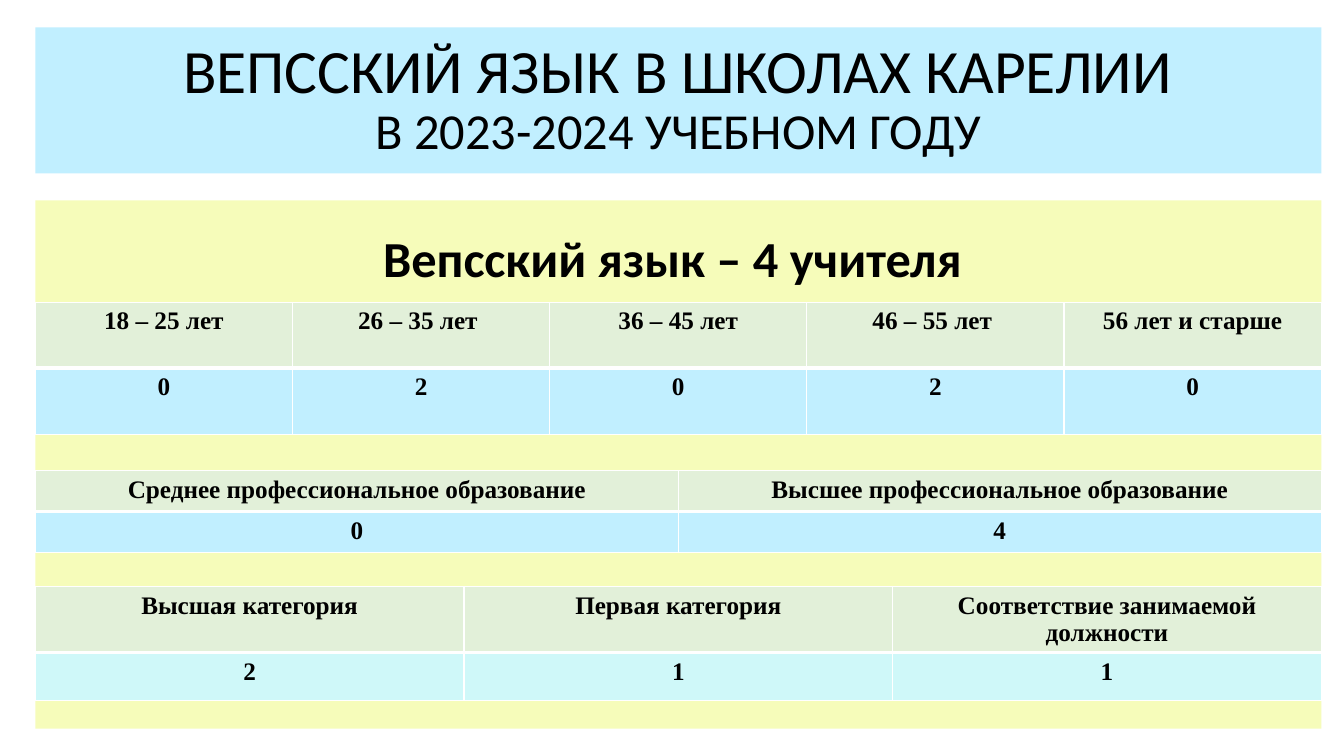
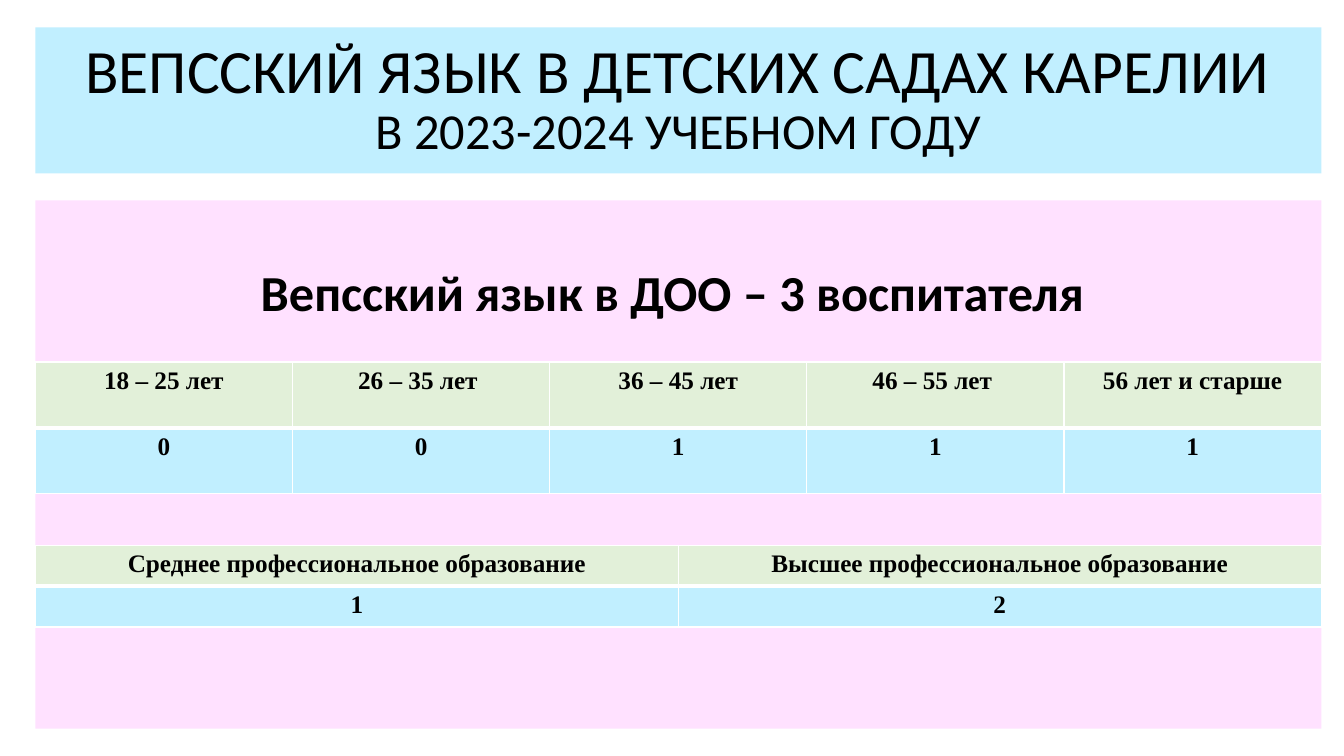
"""Build two slides on Veps language teaching in Karelia."""
from lxml.etree import SubElement
from pptx import Presentation
from pptx.dml.color import RGBColor
from pptx.enum.shapes import MSO_SHAPE as Shape
from pptx.enum.text import MSO_ANCHOR as Anchor, PP_ALIGN as Align
from pptx.oxml.ns import qn
from pptx.util import Cm, Pt

COLORS = {
    "black": "000000",
    "white": "FFFFFF",
    "sky": "C1EFFF",
    "aqua": "CFF8F9",
    "green": "E2F0D9",
    "yellow": "F6FCBA",
    "pink": "FFE1FF",
}
LEFT, WIDTH = 0.89, 32.41
THIN, THICK = 1, 3
AGES = ["18 – 25 лет", "26 – 35 лет ", "36 – 45 лет", "46 – 55 лет ", "56 лет и старше"]
EDUCATION = ["Среднее профессиональное образование", "Высшее профессиональное образование"]
CATEGORIES = ["Высшая категория", "Первая категория", "Соответствие занимаемой должности"]
AGE_ROWS = (1.66, 1.66)
EDUCATION_ROWS = (1.03, 1.03)
CATEGORY_ROWS = (1.65, 1.22)


def color(name):
    return RGBColor.from_string(COLORS[name])


def format_text(text_frame, sizes, font_name, bold=False):
    paragraph = text_frame.paragraphs[0]
    paragraph.alignment = Align.CENTER
    for run, size in zip(paragraph.runs, sizes):
        run.font.size = Pt(size)
        run.font.name = font_name
        run.font.bold = bold
        run.font.color.rgb = color("black")
    return paragraph


def add_panel(slide, top, height, fill, text, anchor):
    shape = slide.shapes.add_shape(Shape.RECTANGLE, Cm(LEFT), Cm(top), Cm(WIDTH), Cm(height))
    shape.shadow.inherit = False
    shape.fill.solid()
    shape.fill.fore_color.rgb = color(fill)
    shape.line.fill.background()
    text_frame = shape.text_frame
    text_frame.word_wrap = True
    text_frame.vertical_anchor = anchor
    text_frame.text = text
    return text_frame


def add_title(slide, text):
    title = add_panel(slide, 0.69, 3.68, "sky", f"{text}\vВ 2023-2024 УЧЕБНОМ ГОДУ", Anchor.MIDDLE)
    format_text(title, (44, 36), "Calibri").line_spacing = 0.9


def add_body(slide, fill, text, margin_top):
    body = add_panel(slide, 5.05, 13.31, fill, text, Anchor.TOP)
    body.margin_top = Cm(margin_top)
    format_text(body, (36,), "Calibri", bold=True)


def set_borders(cell, top, bottom):
    properties = cell._tc.get_or_add_tcPr()
    for side, width in (("L", THIN), ("R", THIN), ("T", top), ("B", bottom)):
        line = SubElement(properties, qn(f"a:ln{side}"), w=str(Pt(width)))
        fill = SubElement(line, qn("a:solidFill"))
        SubElement(fill, qn("a:srgbClr"), val=COLORS["white"])


def add_count_table(slide, top, row_heights, headers, counts, count_fill="sky"):
    frame = slide.shapes.add_table(2, len(headers), Cm(LEFT), Cm(top), Cm(WIDTH), Cm(sum(row_heights)))
    table = frame.table
    for column in table.columns:
        column.width = Cm(WIDTH / len(headers))
    rows = (
        (headers, "green", THIN, THICK),
        (counts, count_fill, THICK, THIN),
    )
    for row, height, (texts, fill, upper, lower) in zip(table.rows, row_heights, rows):
        row.height = Cm(height)
        for cell, text in zip(row.cells, texts):
            set_borders(cell, upper, lower)
            cell.fill.solid()
            cell.fill.fore_color.rgb = color(fill)
            cell.text_frame.text = str(text)
            format_text(cell.text_frame, (18,), "Times New Roman", bold=True)


def add_slide(presentation, title, body_fill, heading, margin_top):
    slide = presentation.slides.add_slide(presentation.slide_layouts[6])
    add_title(slide, title)
    add_body(slide, body_fill, heading, margin_top)
    return slide


def main():
    presentation = Presentation()
    presentation.slide_width = Cm(33.87)
    presentation.slide_height = Cm(19.05)

    schools = add_slide(presentation, "ВЕПССКИЙ ЯЗЫК В ШКОЛАХ КАРЕЛИИ", "yellow",
                        "Вепсский язык – 4 учителя ", 0.67)
    add_count_table(schools, 7.62, AGE_ROWS, AGES, [0, 2, 0, 2, 0])
    add_count_table(schools, 11.86, EDUCATION_ROWS, EDUCATION, [0, 4])
    add_count_table(schools, 14.78, CATEGORY_ROWS, CATEGORIES, [2, 1, 1], "aqua")

    kindergartens = add_slide(presentation, "ВЕПССКИЙ ЯЗЫК В ДЕТСКИХ САДАХ КАРЕЛИИ", "pink",
                              "Вепсский язык в ДОО – 3 воспитателя ", 1.53)
    add_count_table(kindergartens, 9.12, AGE_ROWS, AGES, [0, 0, 1, 1, 1])
    add_count_table(kindergartens, 13.74, EDUCATION_ROWS, EDUCATION, [1, 2])

    presentation.save("out.pptx")


if __name__ == "__main__":
    main()
